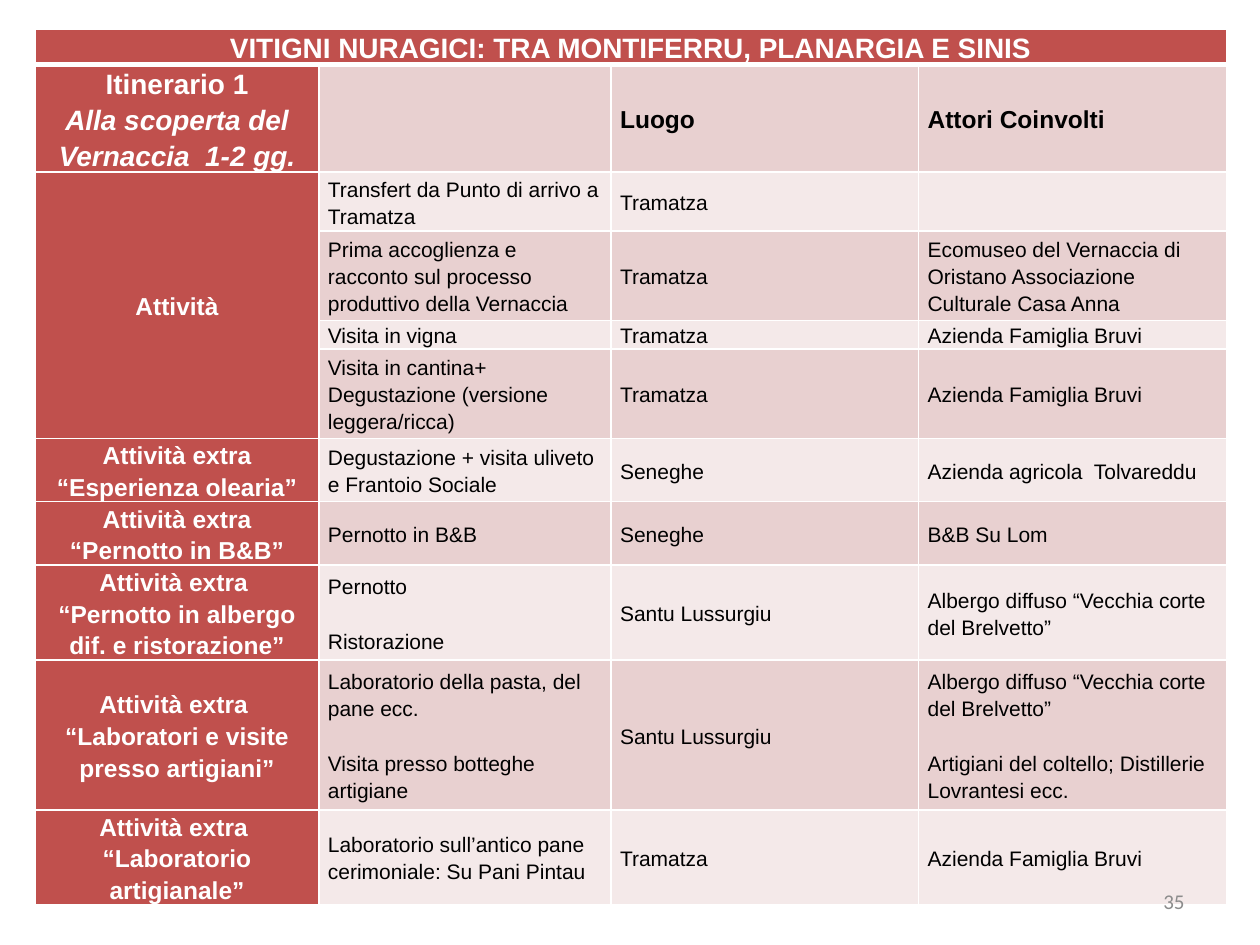
from lxml.etree import SubElement
from pptx import Presentation
from pptx.dml.color import RGBColor
from pptx.enum.text import MSO_ANCHOR as Anchor, PP_ALIGN as Align
from pptx.oxml.ns import qn
from pptx.util import Cm, Pt

COLORS = {"red": "C0504D", "rose": "E8D0D0", "pale": "F4E9E9",
          "white": "FFFFFF", "black": "000000", "gray": "8C8C8C"}
COLUMN_WIDTHS = [5.72, 5.89, 6.2, 6.2]
ROW_HEIGHTS = [0.66, 2.11, 1.19, 1.8, 0.58, 1.8, 1.19, 1.19, 1.8, 3.02, 1.8]
LAST_ACTIVITY_ROW = 5

# Each line of a cell is one paragraph
ROWS = [
    ["VITIGNI NURAGICI: TRA MONTIFERRU, PLANARGIA E SINIS", "", "", ""],
    ["Itinerario 1\nAlla scoperta del Vernaccia  1-2 gg.", "", "Luogo", "Attori Coinvolti"],
    ["Attività", "Transfert da Punto di arrivo a Tramatza", "Tramatza", ""],
    ["", "Prima accoglienza e racconto sul processo produttivo della Vernaccia",
     "Tramatza", "Ecomuseo del Vernaccia di Oristano Associazione Culturale Casa Anna"],
    ["", "Visita in vigna", "Tramatza", "Azienda Famiglia Bruvi"],
    ["", "Visita in cantina+ Degustazione (versione leggera/ricca)",
     "Tramatza", "Azienda Famiglia Bruvi"],
    ["Attività extra\n“Esperienza olearia”",
     "Degustazione + visita uliveto e Frantoio Sociale",
     "Seneghe", "Azienda agricola  Tolvareddu"],
    ["Attività extra “Pernotto in B&B”", "Pernotto in B&B", "Seneghe", "B&B Su Lom"],
    ["Attività extra \n“Pernotto in albergo dif. e ristorazione”",
     "Pernotto\nRistorazione", "Santu Lussurgiu",
     "Albergo diffuso “Vecchia corte del Brelvetto”"],
    ["Attività extra \n“Laboratori e visite presso artigiani”",
     "Laboratorio della pasta, del pane ecc.\nVisita presso botteghe artigiane",
     "Santu Lussurgiu",
     "Albergo diffuso “Vecchia corte del Brelvetto”\n"
     "Artigiani del coltello; Distillerie Lovrantesi ecc."],
    ["Attività extra \n“Laboratorio artigianale”",
     "Laboratorio sull’antico pane cerimoniale: Su Pani Pintau",
     "Tramatza", "Azienda Famiglia Bruvi"],
]


def write(para, text, color, **font):
    span = para.add_run()
    span.text = text
    span.font.color.rgb = RGBColor.from_string(COLORS[color])
    for name, value in font.items():
        setattr(span.font, name, value)


def add_border(cell, side, points):
    line = SubElement(cell._tc.get_or_add_tcPr(), qn(f"a:ln{side}"), w=str(Pt(points)))
    fill = SubElement(line, qn("a:solidFill"))
    SubElement(fill, qn("a:srgbClr"), val=COLORS["white"])


deck = Presentation()
deck.slide_width, deck.slide_height = Cm(25.4), Cm(19.05)
page = deck.slides.add_slide(deck.slide_layouts[6])

# Itinerary table
table = page.shapes.add_table(len(ROWS), len(COLUMN_WIDTHS), Cm(0.71), Cm(0.58),
                              Cm(sum(COLUMN_WIDTHS)), Cm(sum(ROW_HEIGHTS))).table
table.first_row = table.horz_banding = False
for column, width in zip(table.columns, COLUMN_WIDTHS):
    column.width = Cm(width)
for row, height in zip(table.rows, ROW_HEIGHTS):
    row.height = Cm(height)
table.cell(0, 0).merge(table.cell(0, 3))
table.cell(2, 0).merge(table.cell(LAST_ACTIVITY_ROW, 0))

cell_format = {"vertical_anchor": Anchor.MIDDLE, "margin_left": Cm(0.18),
               "margin_right": Cm(0.18), "margin_top": 0, "margin_bottom": 0}
for r, texts in enumerate(ROWS):
    for c, text in enumerate(texts):
        cell = table.cell(r, c)
        for name, value in cell_format.items():
            setattr(cell, name, value)

        # Borders, with a thick rule under the heading, then the banded fill
        for side in "LRTB":
            under_heading = (r, side) in [(0, "B"), (1, "T")]
            add_border(cell, side, 3 if under_heading else 1)
        label = r == 0 or c == 0
        band = "red" if label else "rose" if r % 2 else "pale"
        cell.fill.solid()
        cell.fill.fore_color.rgb = RGBColor.from_string(COLORS[band])

        # Text: large headings, bold row labels, plain details
        size = 16 if label and r < 2 else 14 if label or r == 1 else 12
        if not text:
            cell.text_frame.paragraphs[0].font.size = Pt(size)
            continue
        for i, line in enumerate(text.split("\n")):
            frame = cell.text_frame
            para = frame.add_paragraph() if i else frame.paragraphs[0]
            para.alignment = Align.CENTER if label else Align.LEFT
            para.line_spacing = 1.15
            if i and not label:
                para.space_before = Pt(16)
            write(para, line, "white" if label else "black", name="Arial", size=Pt(size),
                  bold=label or r == 1, italic=r == 1 and i == 1)

# Page number
box = page.shapes.add_textbox(Cm(18.21), Cm(17.65), Cm(5.92), Cm(1.02))
box.text_frame.word_wrap = True
box.text_frame.vertical_anchor = Anchor.MIDDLE
para = box.text_frame.paragraphs[0]
para.alignment = Align.RIGHT
write(para, "35", "gray", name="Calibri", size=Pt(12))

deck.save("out.pptx")
